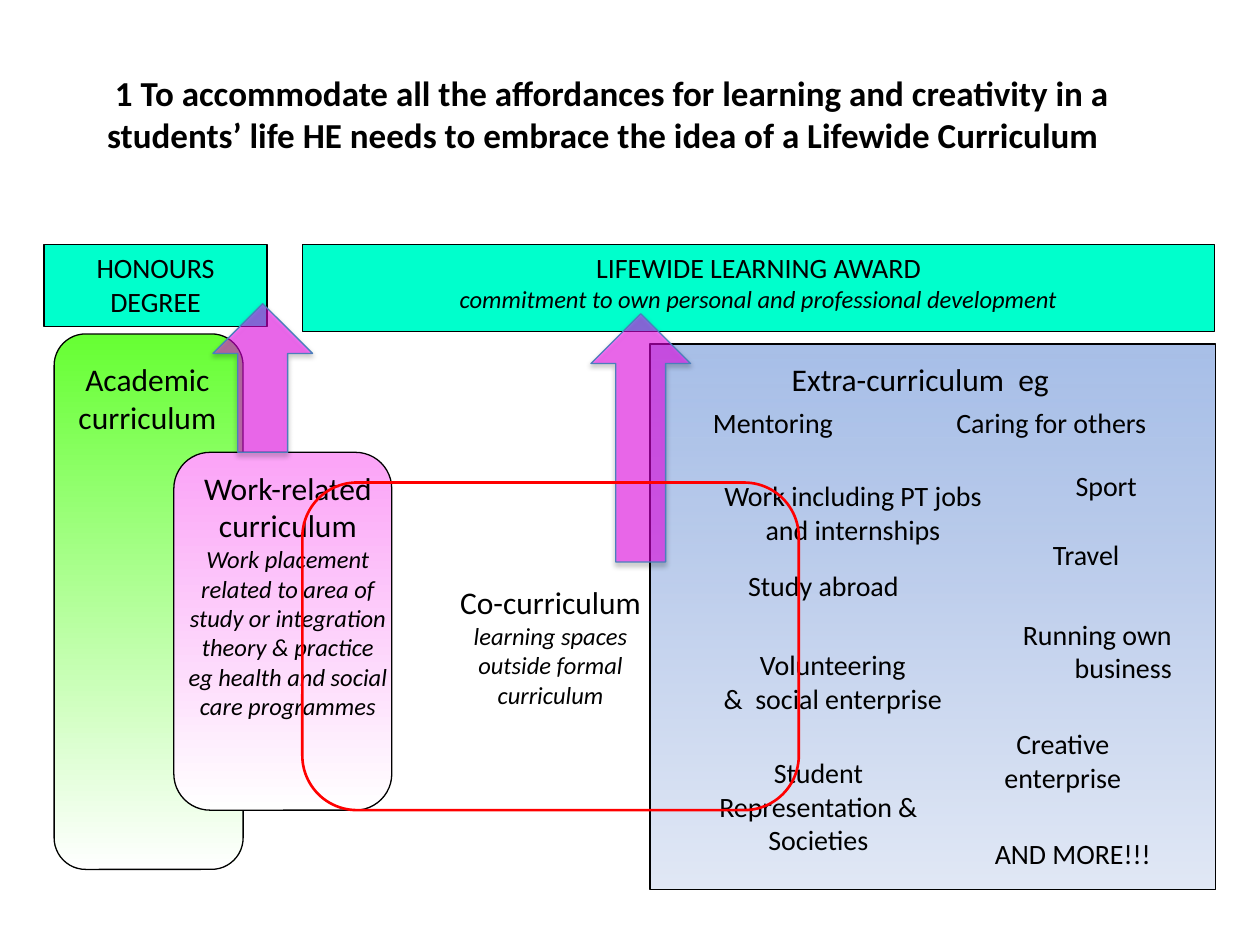
import pptx
import pptx.dml.color
import pptx.enum.shapes
import pptx.enum.text
import pptx.oxml
import pptx.oxml.ns
import pptx.util

Inches = pptx.util.Inches
Pt = pptx.util.Pt
SHAPE = pptx.enum.shapes.MSO_SHAPE
ALIGN = pptx.enum.text.PP_ALIGN
ANCHOR = pptx.enum.text.MSO_ANCHOR

COLOURS = {
    "text": "000000", "outline": "000000", "award": "00FFCC",
    "arrow": "FF00FF", "arrow_line": "4B7EBC", "co_line": "FF0000",
}
# Gradient stops: position %, colour, opacity %
GRADIENTS = {
    "extra": [(0, "9AB5E4", 86), (50, "C2D1ED", 100), (100, "E1E8F5", 100)],
    "academic": [(0, "66FF33", 100), (100, "FFFFFF", 100)],
    "work": [(0, "FBA3F7", 100), (100, "FFFFFF", 100)],
}
LABEL = {"size": Pt(16)}
HEADING = {"size": Pt(18)}
DETAIL = {"size": Pt(14), "italic": True}
TITLE = {"size": Pt(20), "bold": True}

ACTIVITIES = [
    ((7.28, 5.72, 2.31, 0.71), ["Creative", "enterprise"]),
    ((8.15, 4.22, 0.94, 0.51), ["Travel"]),
    ((7.28, 3.17, 2.13, 0.39), ["Caring for others"]),
    ((5.47, 3.17, 1.33, 0.42), ["Mentoring"]),
    ((5.39, 5.09, 2.44, 0.63), ["Volunteering", "&  social enterprise"]),
    ((5.47, 3.75, 2.6, 0.71), ["Work including PT jobs and internships"]),
    ((5.55, 5.95, 1.89, 0.94), ["Student Representation & Societies"]),
    ((5.71, 4.46, 1.65, 0.47), ["Study abroad"]),
    ((8.31, 3.67, 0.94, 0.51), ["Sport"]),
    ((7.36, 6.59, 2.31, 0.71), ["AND MORE!!!"]),
]


def rgb(name):
    return pptx.dml.color.RGBColor.from_string(COLOURS[name])


def drawing_xml(body):
    """Parse a DrawingML fragment whose root tag ends with {ns}."""
    return pptx.oxml.parse_xml(body.format(ns=pptx.oxml.ns.nsdecls("a")))


def write(box, lines, align=ALIGN.CENTER, anchor=ANCHOR.TOP):
    """Fill a box with (text, format) lines, one paragraph each."""
    frame = box.text_frame
    frame.word_wrap = True
    frame.auto_size = pptx.enum.text.MSO_AUTO_SIZE.NONE
    frame.vertical_anchor = anchor
    for index, (text, style) in enumerate(lines):
        paragraph = frame.add_paragraph() if index else frame.paragraphs[0]
        paragraph.alignment = align
        span = paragraph.add_run()
        span.text = text
        span.font.name = "Calibri"
        span.font.color.rgb = rgb("text")
        for name, value in style.items():
            setattr(span.font, name, value)


def styled(lines, style):
    return [(line, style) for line in lines]


def add_text(page, place, lines, align=ALIGN.CENTER):
    box = page.shapes.add_textbox(*map(Inches, place))
    write(box, lines, align)
    return box


def add_panel(page, kind, place, fill=None, line="outline", width=0.75):
    panel = page.shapes.add_shape(kind, *map(Inches, place))
    panel.shadow.inherit = False
    panel.line.color.rgb = rgb(line)
    panel.line.width = Pt(width)
    if fill is None:
        panel.fill.background()
    elif fill in GRADIENTS:
        fill_gradient(panel, GRADIENTS[fill])
    else:
        panel.fill.solid()
        panel.fill.fore_color.rgb = rgb(fill)
    return panel


def fill_gradient(panel, stops):
    panel.fill.gradient()
    panel.fill.gradient_angle = 270
    stop_list = panel._element.spPr.find(".//" + pptx.oxml.ns.qn("a:gsLst"))
    for stop in list(stop_list):
        stop_list.remove(stop)
    for position, colour, opacity in stops:
        stop_list.append(drawing_xml(
            f'<a:gs {{ns}} pos="{position * 1000}"><a:srgbClr val="{colour}">'
            f'<a:alpha val="{opacity * 1000}"/></a:srgbClr></a:gs>'))


def add_arrow(page, place):
    """Translucent up arrow with a soft shadow below."""
    arrow = add_panel(page, SHAPE.UP_ARROW, place, "arrow", "arrow_line")
    properties = arrow._element.spPr
    colour = properties.find(
        "/".join(map(pptx.oxml.ns.qn, ("a:solidFill", "a:srgbClr"))))
    colour.append(drawing_xml('<a:alpha {ns} val="51000"/>'))
    effects = properties.find(pptx.oxml.ns.qn("a:effectLst"))
    effects.append(drawing_xml(
        f'<a:outerShdw {{ns}} blurRad="{Pt(3.1)}" dist="{Pt(1.8)}" '
        'dir="5400000" rotWithShape="0"><a:srgbClr val="000000">'
        '<a:alpha val="35000"/></a:srgbClr></a:outerShdw>'))


def add_title(page):
    title = page.shapes.title
    title.left, title.top, title.width, title.height = map(
        Inches, (0.75, 0.52, 8.35, 0.77))
    write(title, styled([
        " 1 To accommodate all the affordances for learning and creativity in a",
        "students’ life HE needs to embrace the idea of a Lifewide Curriculum",
    ], TITLE), ALIGN.LEFT)


def add_awards(page):
    degree = add_panel(page, SHAPE.RECTANGLE, (0.35, 1.94, 1.77, 0.65), "award")
    write(degree, styled(["HONOURS", "DEGREE"], LABEL))
    award = add_panel(page, SHAPE.RECTANGLE, (2.4, 1.94, 7.24, 0.69), "award")
    write(award, [
        ("LIFEWIDE LEARNING AWARD", LABEL),
        ("commitment to own personal and professional development", DETAIL)])


def add_curricula(page):
    add_panel(page, SHAPE.RECTANGLE, (5.16, 2.73, 4.49, 4.33), "extra")
    add_text(page, (5.94, 2.81, 2.73, 0.4),
             [("Extra-curriculum  eg", HEADING)])
    add_arrow(page, (4.69, 2.49, 0.79, 1.97))

    add_panel(page, SHAPE.ROUNDED_RECTANGLE, (0.43, 2.65, 1.5, 4.25), "academic")
    add_text(page, (0.46, 2.81, 1.42, 0.71),
             styled(["Academic", "curriculum"], HEADING))

    add_panel(page, SHAPE.ROUNDED_RECTANGLE, (1.38, 3.59, 1.73, 2.84), "work")
    add_text(page, (1.38, 3.67, 1.81, 2.68),
             styled(["Work-related", "curriculum"], HEADING) + styled([
                 "Work placement",
                 "related to area of study or integration",
                 "theory & practice",
                 "eg health and social care programmes"], DETAIL))
    add_arrow(page, (1.69, 2.41, 0.79, 1.18))


def add_activities(page):
    for place, lines in ACTIVITIES:
        add_text(page, place, styled(lines, LABEL))
    business = add_text(page, (7.99, 4.85, 1.65, 0.63),
                        styled(["Running own", "business"], LABEL), ALIGN.RIGHT)
    business.text_frame.margin_right = Inches(0.34)


def add_co_curriculum(page):
    frame = add_panel(page, SHAPE.ROUNDED_RECTANGLE, (2.4, 3.83, 3.94, 2.6),
                      line="co_line", width=1.5)
    write(frame, [("Co-curriculum", HEADING)] + styled(
        ["learning spaces", "outside formal", "curriculum"], DETAIL),
        anchor=ANCHOR.MIDDLE)


def main():
    deck = pptx.Presentation()
    deck.slide_width, deck.slide_height = Inches(10), Inches(7.5)
    page = deck.slides.add_slide(deck.slide_layouts.get_by_name("Title Only"))
    add_title(page)
    add_awards(page)
    add_curricula(page)
    add_activities(page)
    add_co_curriculum(page)
    deck.save("out.pptx")


if __name__ == "__main__":
    main()
